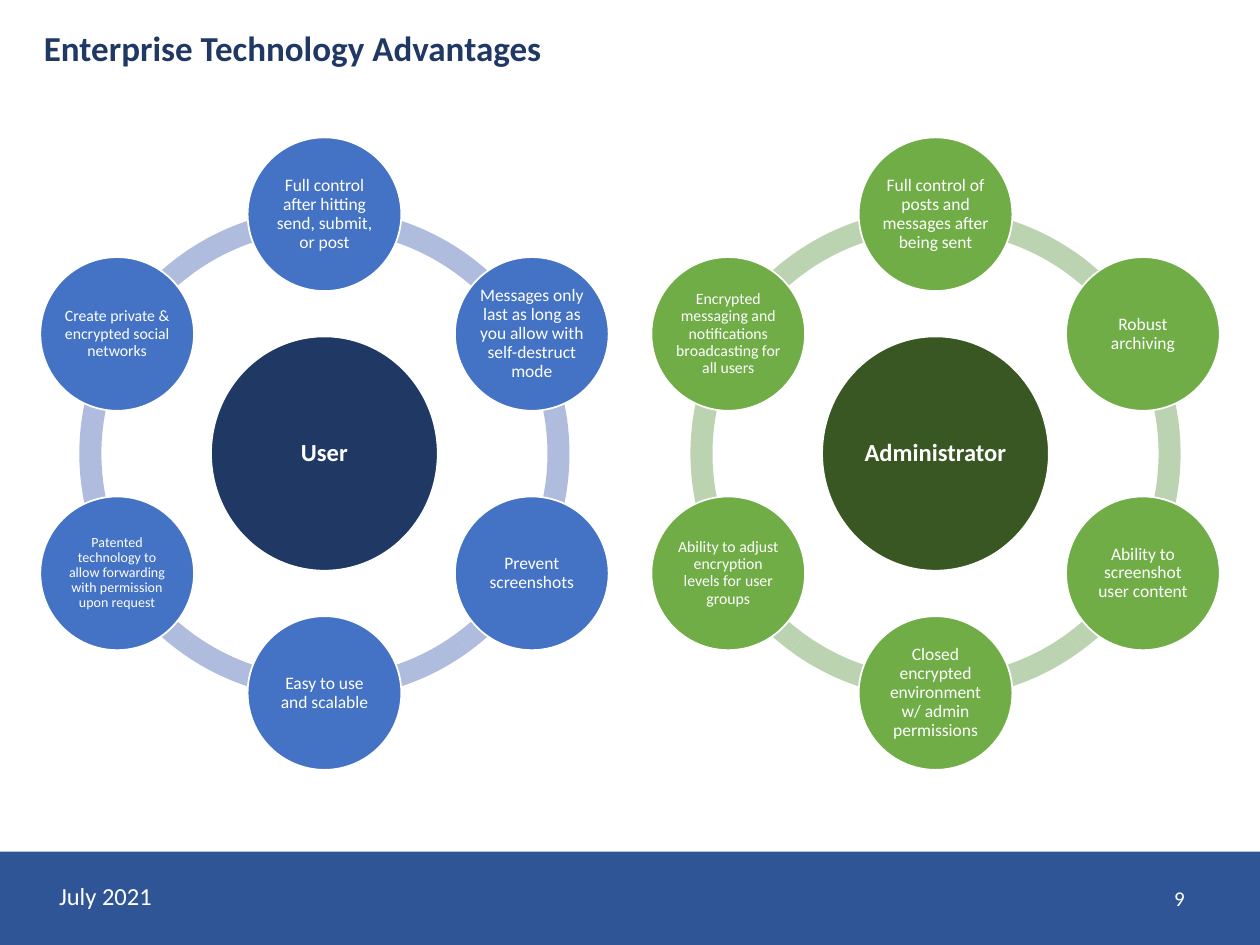
from itertools import pairwise
from math import cos, radians, sin

from pptx import Presentation
from pptx.dml.color import RGBColor
from pptx.enum.shapes import MSO_SHAPE
from pptx.enum.text import MSO_ANCHOR, PP_ALIGN
from pptx.util import Inches, Pt

ARC, OVAL, RECT = MSO_SHAPE.BLOCK_ARC, MSO_SHAPE.OVAL, MSO_SHAPE.RECTANGLE
CENTER, LEFT = PP_ALIGN.CENTER, PP_ALIGN.LEFT
MIDDLE, TOP = MSO_ANCHOR.MIDDLE, MSO_ANCHOR.TOP

COLORS = {
    "white": "FFFFFF", "band": "2F5597", "navy": "203864",
    "blue": "4472C4", "pale_blue": "B0BCDE",
    "forest": "385723", "green": "70AD47", "pale_green": "BBD3B1",
}
FONT = "Calibri"
RING_EDGES = [18, 54, 90, 126, 162, 198, 18]

USER_BENEFITS = [
    ("Full control after hitting send, submit, or post", 10),
    ("Messages only last as long as you allow with self-destruct mode", 10),
    ("Prevent screenshots", 10),
    ("Easy to use and scalable", 10),
    ("Patented technology to allow forwarding with permission upon request", 8),
    ("Create private & encrypted social networks", 9),
]
ADMIN_BENEFITS = [
    ("Full control of posts and messages after being sent", 10),
    ("Robust archiving", 10),
    ("Ability to screenshot user content", 10),
    ("Closed encrypted environment w/ admin permissions", 10),
    ("Ability to adjust encryption levels for user groups", 9),
    ("Encrypted messaging and notifications broadcasting for all users", 9),
]


def color(name):
    """Return the named colour."""
    return RGBColor.from_string(COLORS[name])


def write(shape, text, size, ink="white", bold=False, align=CENTER, anchor=MIDDLE,
          spacing=1.0, inset=None):
    """Write one formatted paragraph into a shape."""
    frame = shape.text_frame
    frame.word_wrap = True
    frame.vertical_anchor = anchor
    if inset is not None:
        frame.margin_left = frame.margin_right = Inches(inset)
        frame.margin_top = frame.margin_bottom = Inches(inset)
    para = frame.paragraphs[0]
    para.alignment = align
    para.line_spacing = spacing
    span = para.add_run()
    span.text = text
    span.font.name = FONT
    span.font.size = Pt(size)
    span.font.bold = bold
    span.font.color.rgb = color(ink)


def add_filled(parent, kind, left, top, width, height, fill, outline=None):
    """Add a flat filled shape with an optional outline."""
    shape = parent.shapes.add_shape(
        kind, Inches(left), Inches(top), Inches(width), Inches(height))
    shape.shadow.inherit = False
    shape.fill.solid()
    shape.fill.fore_color.rgb = color(fill)
    if outline:
        shape.line.color.rgb = color(outline)
        shape.line.width = Pt(1)
    else:
        shape.line.fill.background()
    return shape


def add_label(page, left, top, width, height, text, size, **style):
    """Add a text box with one line of text."""
    box = page.shapes.add_textbox(
        Inches(left), Inches(top), Inches(width), Inches(height))
    write(box, text, size, **style)


def add_circle(group, x, y, width, height, fill, text, size, bold=False, inset=0.01):
    """Add a labelled circle centred on a point."""
    circle = add_filled(group, OVAL, x - width / 2, y - height / 2,
                        width, height, fill, "white")
    write(circle, text, size, bold=bold, spacing=0.9, inset=inset)


def add_cycle(page, left, top, width, height, hub, benefits, hub_fill, fill, ring_fill):
    """Add a hub surrounded by a ring of benefit circles inside a box."""
    group = page.shapes.add_group_shape()
    x, y = left + width / 2, top + height / 2
    ring, node = 3.89, 1.22
    radius = (height - node) / 2
    for start, end in pairwise(RING_EDGES):
        arc = add_filled(group, ARC, x - ring / 2, y - ring / 2, ring, ring, ring_fill)
        arc.adjustments[0] = start * 0.6
        arc.adjustments[1] = end * 0.6
        arc.adjustments[2] = 0.045
    add_circle(group, x, y, 1.8, 1.86, hub_fill, hub, 14, bold=True, inset=0.02)
    for index, (text, size) in enumerate(benefits):
        angle = radians(index * 360 / len(benefits))
        add_circle(group, x + radius * sin(angle), y - radius * cos(angle),
                   node, node, fill, text, size)


def add_footer(page, left, top, width, height):
    """Add the footer band with date and page number."""
    add_filled(page, RECT, left, top, width, height, "band")
    add_label(page, left + 0.37, top + 0.18, 2.29, 0.34, "July 2021", 14,
              align=LEFT, anchor=TOP)
    add_label(page, left + width - 0.91, top + 0.17, 0.54, 0.4, "9", 12)


def main():
    """Build and save the slide."""
    deck = Presentation()
    deck.slide_width, deck.slide_height = Inches(10), Inches(7.5)
    page = deck.slides.add_slide(deck.slide_layouts[6])
    add_footer(page, 0, 6.76, 10, 0.74)
    add_label(page, 0.25, 0.23, 9.4, 0.34, "Enterprise Technology Advantages", 20,
              ink="navy", bold=True, align=LEFT, spacing=0.9)
    add_cycle(page, 0.32, 1.09, 4.51, 5.02, "User", USER_BENEFITS,
              "navy", "blue", "pale_blue")
    add_cycle(page, 5.17, 1.09, 4.51, 5.02, "Administrator", ADMIN_BENEFITS,
              "forest", "green", "pale_green")
    deck.save("out.pptx")


if __name__ == "__main__":
    main()
